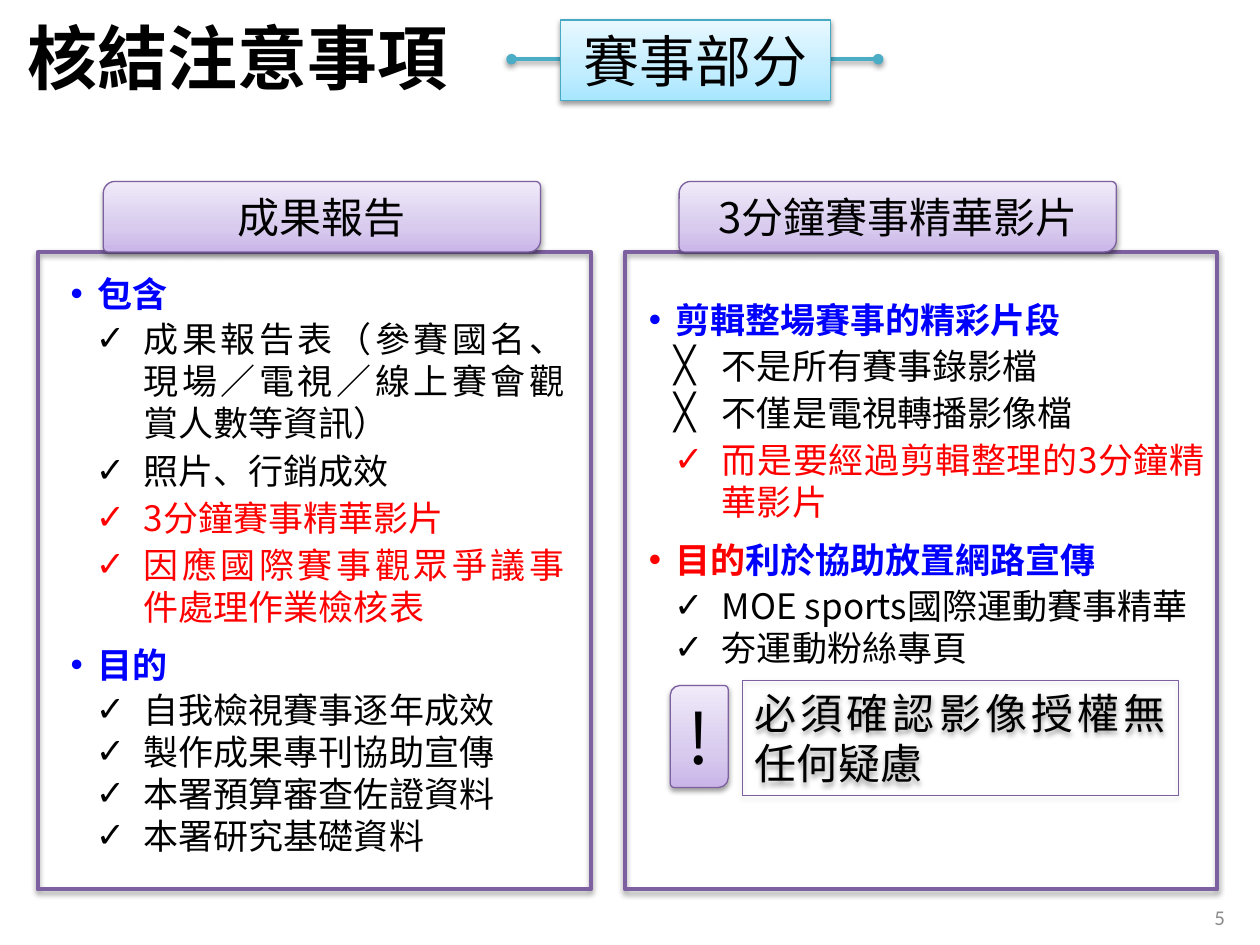
from copy import deepcopy
from pptx import Presentation
from pptx import util as u
from pptx.dml.color import RGBColor
from pptx.enum import shapes, text
from pptx.oxml import parse_xml
from pptx.oxml.ns import qn, nsdecls

In, Pt, rgb = u.Inches, u.Pt, RGBColor.from_string
NS = nsdecls("a")
FONT = "Noto Sans CJK SC"
BLACK, BLUE, RED = "000000", "0000FF", "FF0000"
VIOLET = "7D60A0"
LILAC = ["C9B5E8", "D8CBEE", "F0EAF9"]
SKY = ["A7E6FF", "C1EDFF", "E7F8FF"]
RECT = shapes.MSO_SHAPE.RECTANGLE
DIAG = shapes.MSO_SHAPE.ROUND_2_DIAG_RECTANGLE
MID = text.MSO_ANCHOR.MIDDLE
LEFT, CENTER = text.PP_ALIGN.LEFT, text.PP_ALIGN.CENTER
RIGHT, FULL = text.PP_ALIGN.RIGHT, text.PP_ALIGN.JUSTIFY
SHADE = (f'<a:effectLst {NS}><a:outerShdw blurRad="39400" dist="20300" dir="5400000" '
         'rotWithShape="0"><a:srgbClr val="000000"><a:alpha val="38000"/></a:srgbClr>'
         '</a:outerShdw></a:effectLst>')


def style(run, size, color=BLACK, bold=False, face=FONT):
    font = run.font
    font.size, font.bold, font.name = Pt(size), bold, face
    font.color.rgb = rgb(color)
    run._r.get_or_add_rPr().append(parse_xml(f'<a:ea {NS} typeface="{face}"/>'))


def panel(kind, box, line, width, grad=None, words="", size=24, align=CENTER):
    shape = slide.shapes.add_shape(kind, *map(In, box))
    if kind == DIAG:
        shape.adjustments[0], shape.adjustments[1] = 0.167, 0.068
    if grad:
        shape.fill.gradient()
        shape.fill.gradient_angle = 90
        stops = shape._element.spPr.find(".//" + qn("a:gsLst"))
        stops.insert(1, deepcopy(stops[0]))
        for stop, pos, color in zip(shape.fill.gradient_stops, (0, 0.35, 1), grad):
            stop.position, stop.color.rgb = pos, rgb(color)
    else:
        shape.fill.background()
    shape.line.color.rgb, shape.line.width = rgb(line), Pt(width)
    shape._element.spPr.append(parse_xml(SHADE))
    if words:
        frame = shape.text_frame
        frame.text, frame.word_wrap, frame.vertical_anchor = words, True, MID
        para = frame.paragraphs[0]
        para.alignment = align
        if align == FULL:
            para.line_spacing = Pt(size * 1.2)
        style(para.runs[0], size)


prs = Presentation()
prs.slide_width, prs.slide_height = In(10), In(7.5)
slide = prs.slides.add_slide(prs.slide_layouts[3])

title, left, right = slide.placeholders
title.left, title.top, title.width, title.height = map(In, (0.12, 0.01, 7.09, 0.87))
title.text_frame.text = "核結注意事項"
title.text_frame.vertical_anchor = MID
title.text_frame.paragraphs[0].alignment = LEFT
style(title.text_frame.paragraphs[0].runs[0], 40, bold=True)

rod = slide.shapes.add_connector(shapes.MSO_CONNECTOR.STRAIGHT,
                                 In(4.06), In(0.47), In(6.97), In(0.47))
rod.line.color.rgb, rod.line.width = rgb("4BACC6"), Pt(2)
for end in ("headEnd", "tailEnd"):
    rod.line._get_or_add_ln().append(parse_xml(f'<a:{end} {NS} type="oval"/>'))
rod._element.spPr.append(parse_xml(SHADE))
panel(RECT, (4.45, 0.16, 2.14, 0.64), "46AAC5", 0.75, SKY, "賽事部分", 32)

for x, wide, tab, head in ((0.3, 4.39, 0.82, "成果報告"),
                           (4.96, 4.7, 5.39, "3分鐘賽事精華影片")):
    panel(RECT, (x, 2, wide, 5.06), VIOLET, 2.25)
    panel(DIAG, (tab, 1.44, 3.47, 0.56), VIOLET, 0.75, LILAC, head)

panel(DIAG, (5.32, 5.44, 0.46, 0.81), VIOLET, 0.75, LILAC, "!", 40)
panel(RECT, (5.89, 5.4, 3.46, 0.91), VIOLET, 0.25,
      words="必須確認影像授權無任何疑慮", align=FULL)

report = [
    ("•", 2, [("包含", BLUE)]),
    ("✓", 3, [("成果報告表（參賽國名、現場／電視／線上賽會觀賞人數等資訊）", BLACK)]),
    ("✓", 3, [("照片、行銷成效", BLACK)]),
    ("✓", 3, [("3分鐘賽事精華影片", RED)]),
    ("✓", 3, [("因應國際賽事觀眾爭議事件處理作業檢核表", RED)]),
    ("•", 2, [("目的", BLUE)]),
    ("✓", 0, [("自我檢視賽事逐年成效", BLACK)]),
    ("✓", 0, [("製作成果專刊協助宣傳", BLACK)]),
    ("✓", 0, [("本署預算審查佐證資料", BLACK)]),
    ("✓", 0, [("本署研究基礎資料", BLACK)]),
]
video = [
    ("•", 2, [("剪輯整場賽事的精彩片段", BLUE)]),
    ("╳", 3, [("不是所有賽事錄影檔", BLACK)]),
    ("╳", 3, [("不僅是電視轉播影像檔", BLACK)]),
    ("✓", 3, [("而是要經過剪輯整理的3分鐘精華影片", RED)]),
    ("•", 2, [("目的", RED), ("利於協助放置網路宣傳", BLUE)]),
    ("✓", 0, [("MOE sports國際運動賽事精華", BLACK)]),
    ("✓", 0, [("夯運動粉絲專頁", BLACK)]),
]
for body, box, items in ((left, (0.37, 2.08, 4.21, 4.79), report),
                         (right, (4.96, 2.29, 4.7, 3.06), video)):
    body.left, body.top, body.width, body.height = map(In, box)
    frame = body.text_frame
    frame.auto_size, frame.margin_top = text.MSO_AUTO_SIZE.NONE, In(0.08)
    for i, (mark, after, parts) in enumerate(items):
        para = frame.add_paragraph() if i else frame.paragraphs[0]
        main = mark == "•"
        props = para._p.get_or_add_pPr()
        props.set("marL", str(In(0.3 if main else 0.67)))
        props.set("indent", str(In(-0.21 if main else -0.38)))
        props.append(parse_xml(f'<a:buChar {NS} char="{mark}"/>'))
        para.alignment = FULL if i else LEFT
        para.line_spacing = Pt(24)
        para.space_before = Pt(6 if main and i else 0)
        para.space_after = Pt(after)
        for words, color in parts:
            run = para.add_run()
            run.text = words
            style(run, 20, color, main)

page = slide.shapes.add_textbox(In(7.49), In(7.08), In(2.33), In(0.4)).text_frame
page.text, page.word_wrap, page.vertical_anchor = "5", True, MID
page.paragraphs[0].alignment = RIGHT
style(page.paragraphs[0].runs[0], 12, "8C8C8C", face="Calibri")

prs.save("out.pptx")
